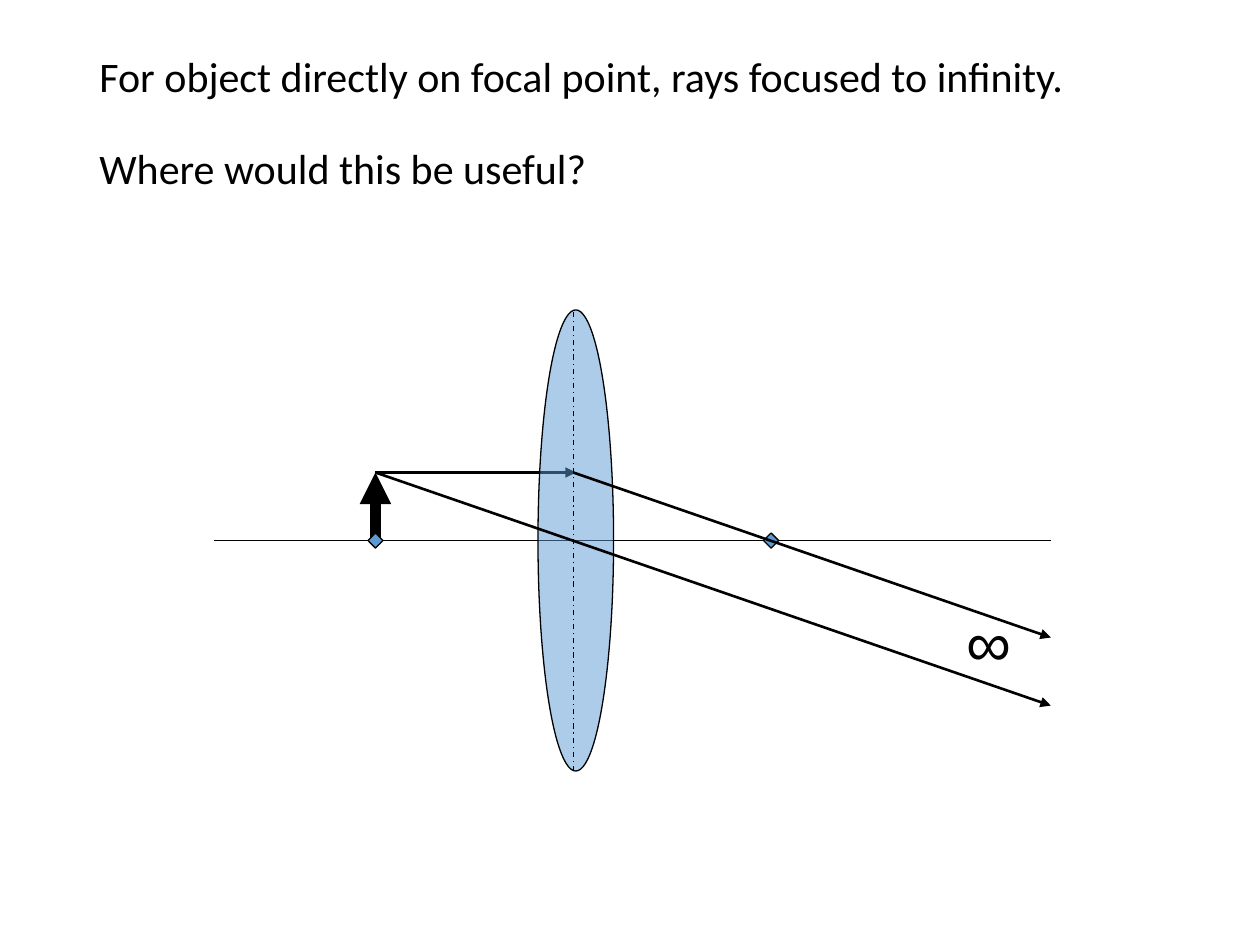
"""Build a slide of a thin lens with the object at its focal point."""
import lxml.etree
import pptx
import pptx.dml.color
import pptx.enum.dml
import pptx.enum.shapes
import pptx.enum.text
import pptx.oxml.ns
import pptx.util

Inches = pptx.util.Inches
Pt = pptx.util.Pt
qn = pptx.oxml.ns.qn
KIND = pptx.enum.shapes.MSO_SHAPE


def paint(target, code):
    target.rgb = pptx.dml.color.RGBColor.from_string(code)


def trace(start, end, width=1.5, tip=True):
    link = slide.shapes.add_connector(
        pptx.enum.shapes.MSO_CONNECTOR.STRAIGHT, *map(Inches, start + end))
    paint(link.line.color, "000000")
    link.line.width = Pt(width)
    props = link._element.spPr
    if tip:
        lxml.etree.SubElement(props.find(qn("a:ln")), qn("a:tailEnd"), type="triangle")
    lxml.etree.SubElement(props, qn("a:effectLst"))
    return link


deck = pptx.Presentation()
deck.slide_width, deck.slide_height = Inches(10), Inches(7.5)
slide = deck.slides.add_slide(deck.slide_layouts[6])

left, right, mid = 1.7, 8.34, 4.55
base, top = 4.29, 3.75
near, far = 2.98, 6.12

trace((near, base), (near, top), 6)
trace((left, base), (right, base), 0.75, False)
trace((near, top), (4.57, top))

marks = [
    (KIND.DIAMOND, far - 0.06, base - 0.06, 0.12, 0.12),
    (KIND.DIAMOND, near - 0.06, base - 0.06, 0.12, 0.12),
    (KIND.OVAL, 4.27, 2.46, 0.6, 3.66),
]
for kind, *area in marks:
    mark = slide.shapes.add_shape(kind, *map(Inches, area))
    mark.shadow.inherit = False
    mark.fill.solid()
    paint(mark.fill.fore_color, "5B9BD5")
    paint(mark.line.color, "000000")
    mark.line.width = Pt(0.75)
    if kind == KIND.OVAL:
        tint = mark._element.spPr.find(qn("a:solidFill"))[0]
        lxml.etree.SubElement(tint, qn("a:alpha"), val="50000")

trace((near, top), (right, 5.6))
trace((mid, top), (right, 5.06))
plane = trace((mid, 6.12), (mid, 2.45), 0.75, False)
plane.line.dash_style = pptx.enum.dml.MSO_LINE.DASH_DOT

lines = ["For object directly on focal point, rays focused to infinity.",
         "Where would this be useful?"]
notes = [
    ((0.69, 0.4, 8.62, 1.45), lines, {"name": "Calibri", "size": Pt(24)},
     {"line_spacing": 0.9, "space_after": Pt(26.4)}),
    ((7.57, 4.74, 0.77, 0.7), ["∞"], {"name": "Arial", "size": Pt(36)}, {}),
]
for area, words, face, gaps in notes:
    frame = slide.shapes.add_textbox(*map(Inches, area)).text_frame
    frame.word_wrap = True
    frame.vertical_anchor = pptx.enum.text.MSO_ANCHOR.TOP
    frame.text = "\n".join(words)
    for para in frame.paragraphs:
        for key, value in gaps.items():
            setattr(para, key, value)
        font = para.runs[0].font
        for key, value in face.items():
            setattr(font, key, value)
        paint(font.color, "000000")

deck.save("out.pptx")
